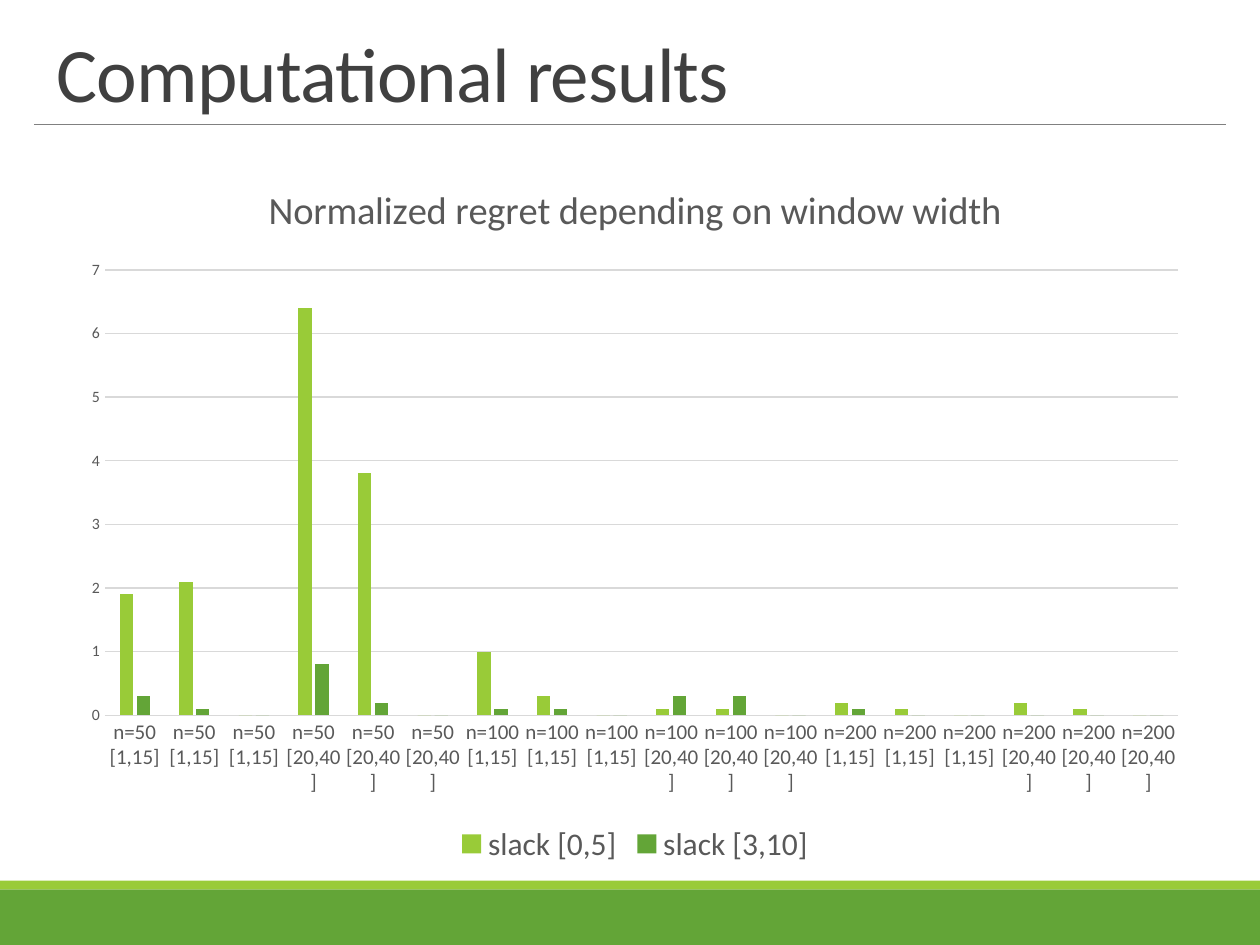
from dataclasses import dataclass

from lxml.etree import SubElement
from pptx import Presentation
from pptx.chart.data import CategoryChartData
from pptx.dml.color import RGBColor
from pptx.enum.chart import XL_CHART_TYPE, XL_LEGEND_POSITION, XL_TICK_MARK
from pptx.enum.shapes import MSO_CONNECTOR, MSO_SHAPE
from pptx.enum.text import MSO_ANCHOR
from pptx.oxml.ns import qn
from pptx.util import Inches, Pt

FONT = "Calibri"
LIME, GREEN = "99CB38", "63A537"
TITLE_GREY, TEXT_GREY, RULE_GREY, GRID_GREY = "404040", "595959", "808080", "D9D9D9"


@dataclass
class Band:
    """A full-width footer band."""
    top: float
    height: float
    color: str


@dataclass
class Series:
    """A named and coloured set of bars."""
    name: str
    values: tuple[float, ...]
    color: str


BANDS = [Band(7.06, 0.44, GREEN), Band(6.99, 0.07, LIME)]
CATEGORIES = [
    f"n={n} {window}"
    for n in (50, 100, 200)
    for window in ("[1,15]", "[20,40]")
    for _ in range(3)
]
SERIES = [
    Series("slack [0,5]", (1.9, 2.1, 0, 6.4, 3.8, 0, 1, 0.3, 0,
                           0.1, 0.1, 0, 0.2, 0.1, 0, 0.2, 0.1, 0), LIME),
    Series("slack [3,10]", (0.3, 0.1, 0, 0.8, 0.2, 0, 0.1, 0.1, 0,
                            0.3, 0.3, 0, 0.1, 0, 0, 0, 0, 0), GREEN),
]


def rgb(color: str) -> RGBColor:
    """Turn a hex string into a colour."""
    return RGBColor.from_string(color)


def set_font(font, size: float, color: str) -> None:
    """Set typeface, size and colour, without bold."""
    font.name, font.size, font.bold = FONT, Pt(size), False
    font.color.rgb = rgb(color)


def set_line(line, color: str, width: float) -> None:
    """Set the colour and width of a line."""
    line.color.rgb = rgb(color)
    line.width = Pt(width)


def add_text(tf, text: str, *, size: float, color: str,
             line_spacing: float | None = None, spacing: float = 0) -> None:
    """Write one formatted run into the first paragraph of a text frame."""
    p = tf.paragraphs[0]
    if line_spacing:
        p.line_spacing = line_spacing
    r = p.add_run()
    r.text = text
    set_font(r.font, size, color)
    if spacing:
        r.font._element.set("spc", str(round(spacing * 100)))


def add_band(s, band: Band) -> None:
    """Draw a footer band across the slide."""
    sp = s.shapes.add_shape(MSO_SHAPE.RECTANGLE, 0, Inches(band.top),
                            Inches(10), Inches(band.height))
    sp.shadow.inherit = False
    sp.fill.solid()
    sp.fill.fore_color.rgb = rgb(band.color)
    sp.line.fill.background()


def add_title(s, text: str) -> None:
    """Draw the slide title and the rule under it."""
    rule = s.shapes.add_connector(MSO_CONNECTOR.STRAIGHT, Inches(0.27), Inches(0.99),
                                  Inches(9.73), Inches(0.99))
    set_line(rule.line, RULE_GREY, 0.5)
    SubElement(rule._element.spPr, qn("a:effectLst"))
    tf = s.shapes.add_textbox(Inches(0.35), Inches(0.05),
                              Inches(9.37), Inches(0.94)).text_frame
    tf.word_wrap = True
    tf.vertical_anchor = MSO_ANCHOR.BOTTOM
    add_text(tf, text, size=44, color=TITLE_GREY, line_spacing=0.85, spacing=-0.5)


def add_regret_chart(s, title: str, series: list[Series]) -> None:
    """Draw the clustered columns with title, axes and legend."""
    data = CategoryChartData()
    data.categories = CATEGORIES
    for entry in series:
        data.add_series(entry.name, entry.values)
    chart = s.shapes.add_chart(XL_CHART_TYPE.COLUMN_CLUSTERED, Inches(0.55), Inches(1.23),
                               Inches(8.98), Inches(5.67), data).chart
    set_font(chart.font, 10, "000000")
    add_text(chart.chart_title.text_frame, title, size=22, color=TEXT_GREY)
    chart.chart_title.include_in_layout = False

    plot = chart.plots[0]
    plot.gap_width, plot.overlap, plot.vary_by_categories = 219, -27, False
    for bars, entry in zip(plot.series, series):
        bars.format.fill.solid()
        bars.format.fill.fore_color.rgb = rgb(entry.color)

    for axis, size in ((chart.category_axis, 12), (chart.value_axis, 9)):
        axis.major_tick_mark = axis.minor_tick_mark = XL_TICK_MARK.NONE
        set_font(axis.tick_labels.font, size, TEXT_GREY)
    set_line(chart.category_axis.format.line, GRID_GREY, 0.75)
    values = chart.value_axis
    values.minimum_scale, values.maximum_scale, values.major_unit = 0, 7, 1
    values.format.line.fill.background()
    set_line(values.major_gridlines.format.line, GRID_GREY, 0.75)

    chart.has_legend = True
    chart.legend.position = XL_LEGEND_POSITION.BOTTOM
    chart.legend.include_in_layout = False
    set_font(chart.legend.font, 18, TEXT_GREY)


def main() -> None:
    """Build and save the slide."""
    prs = Presentation()
    prs.slide_width, prs.slide_height = Inches(10), Inches(7.5)
    s = prs.slides.add_slide(prs.slide_layouts[6])
    for band in BANDS:
        add_band(s, band)
    add_title(s, "Computational results")
    add_regret_chart(s, "Normalized regret depending on window width", SERIES)
    prs.save("out.pptx")


if __name__ == "__main__":
    main()
